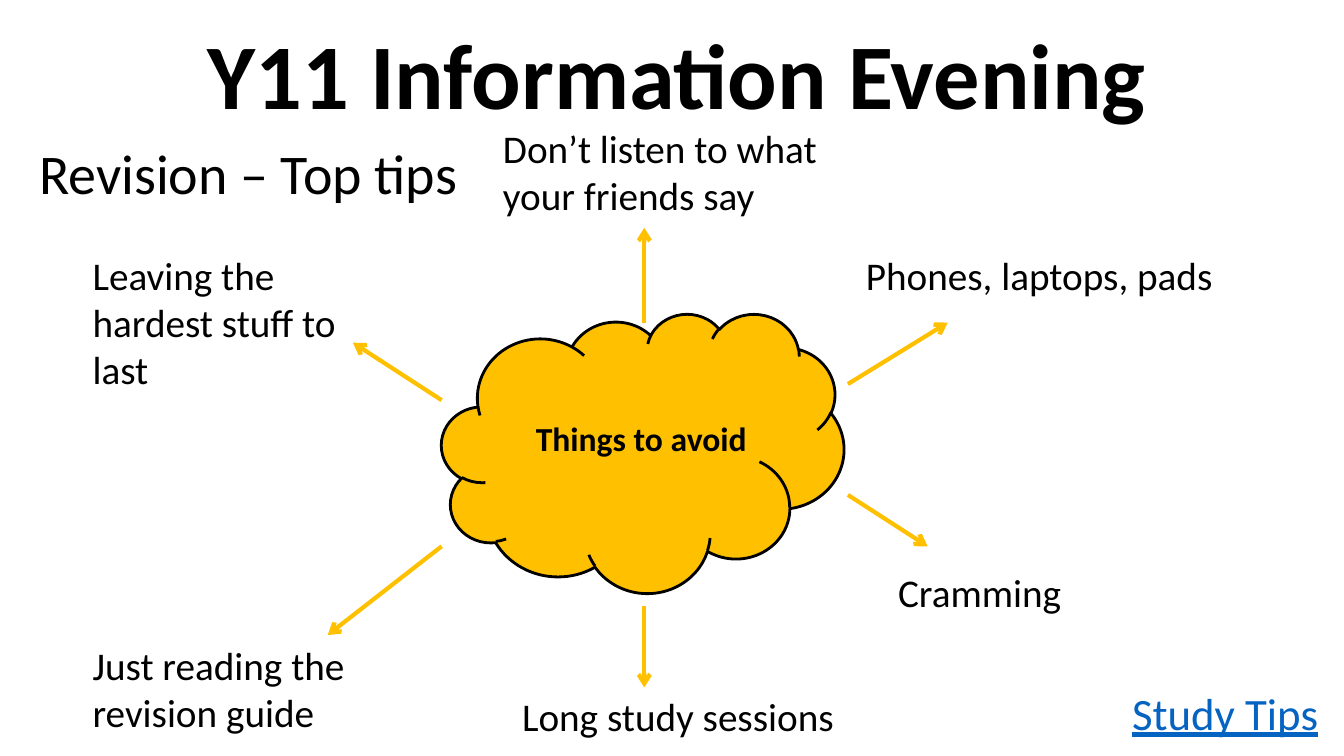
from pptx import Presentation
from pptx.dml.color import RGBColor
from pptx.enum.shapes import MSO_CONNECTOR, MSO_SHAPE
from pptx.enum.text import MSO_ANCHOR, MSO_AUTO_SIZE, PP_ALIGN
from pptx.oxml.ns import qn
from pptx.util import Inches, Pt
from lxml.etree import SubElement

BLACK = "000000"
GOLD = "FFC000"
LINK_BLUE = "0563C1"

TIPS = [
    ("Phones, laptops, pads", (8.49, 2.44, 3.68, 0.57), False, (8.41, 3.81), (9.4, 3.2)),
    ("Cramming", (8.81, 5.59, 1.83, 0.57), False, (8.41, 4.91), (9.2, 5.42)),
    ("Long study sessions", (5.08, 6.82, 3.33, 0.57), False, (6.39, 6.01), (6.39, 6.82)),
    ("Just reading the revision guide", (0.82, 6.31, 2.99, 1.04), True, (4.38, 5.42), (3.25, 6.3)),
    ("Leaving the hardest stuff to last", (0.82, 2.44, 2.99, 1.51), True, (4.38, 3.97), (3.5, 3.4)),
    ("Don’t listen to what your friends say", (4.89, 1.18, 3.48, 1.04), True, (6.39, 3.2), (6.39, 2.26)),
]


def color(hex_value):
    return RGBColor.from_string(hex_value)


def write(frame, wording, size, ink=BLACK, bold=False, underline=False,
          wrap=False, align=PP_ALIGN.LEFT):
    frame.word_wrap = wrap
    frame.vertical_anchor = MSO_ANCHOR.TOP
    paragraph = frame.paragraphs[0]
    paragraph.alignment = align
    run = paragraph.add_run()
    run.text = wording
    run.font.name = "Calibri"
    run.font.size = Pt(size)
    run.font.bold = bold
    run.font.underline = underline
    run.font.color.rgb = color(ink)


def add_label(slide, box, wording, size, **style):
    label = slide.shapes.add_textbox(*map(Inches, box))
    write(label.text_frame, wording, size, **style)
    label.text_frame.auto_size = MSO_AUTO_SIZE.SHAPE_TO_FIT_TEXT


def add_heading(slide, box):
    heading = slide.shapes.title
    heading.left, heading.top, heading.width, heading.height = map(Inches, box)
    write(heading.text_frame, "Y11 Information Evening", 66, bold=True)
    heading.text_frame.auto_size = MSO_AUTO_SIZE.NONE


def add_cloud(slide, box):
    left, top, width, height = box
    cloud = slide.shapes.add_shape(MSO_SHAPE.CLOUD, *map(Inches, box))
    cloud.shadow.inherit = False
    cloud.fill.solid()
    cloud.fill.fore_color.rgb = color(GOLD)
    cloud.line.color.rgb = color(BLACK)
    cloud.line.width = Pt(2)
    add_label(slide, (left + 0.72, top + 0.99, width - 1.47, 0.5), "Things to avoid", 24,
              bold=True, wrap=True, align=PP_ALIGN.CENTER)


def add_arrow(slide, start, end):
    arrow = slide.shapes.add_connector(MSO_CONNECTOR.STRAIGHT, *map(Inches, start + end))
    arrow.line.color.rgb = color(GOLD)
    arrow.line.width = Pt(3)
    SubElement(arrow.line._get_or_add_ln(), qn("a:tailEnd"), type="arrow")
    SubElement(arrow._element.spPr, qn("a:effectLst"))


def add_tip(slide, box, wording, wrap, start, end):
    add_arrow(slide, start, end)
    add_label(slide, box, wording, 28, wrap=wrap)


def main():
    deck = Presentation()
    deck.slide_width, deck.slide_height = Inches(13.33), Inches(7.5)
    slide = deck.slides.add_slide(deck.slide_layouts[5])
    add_heading(slide, (1.96, 0.12, 9.61, 1.21))
    add_cloud(slide, (4.38, 3.11, 3.99, 2.77))
    add_label(slide, (0.29, 1.33, 4.39, 0.77), "Revision – Top tips", 40)
    add_label(slide, (11.13, 6.75, 2.07, 0.64), "Study Tips", 32, ink=LINK_BLUE, underline=True)
    for wording, box, wrap, start, end in TIPS:
        add_tip(slide, box, wording, wrap, start, end)
    deck.save("out.pptx")


if __name__ == "__main__":
    main()
